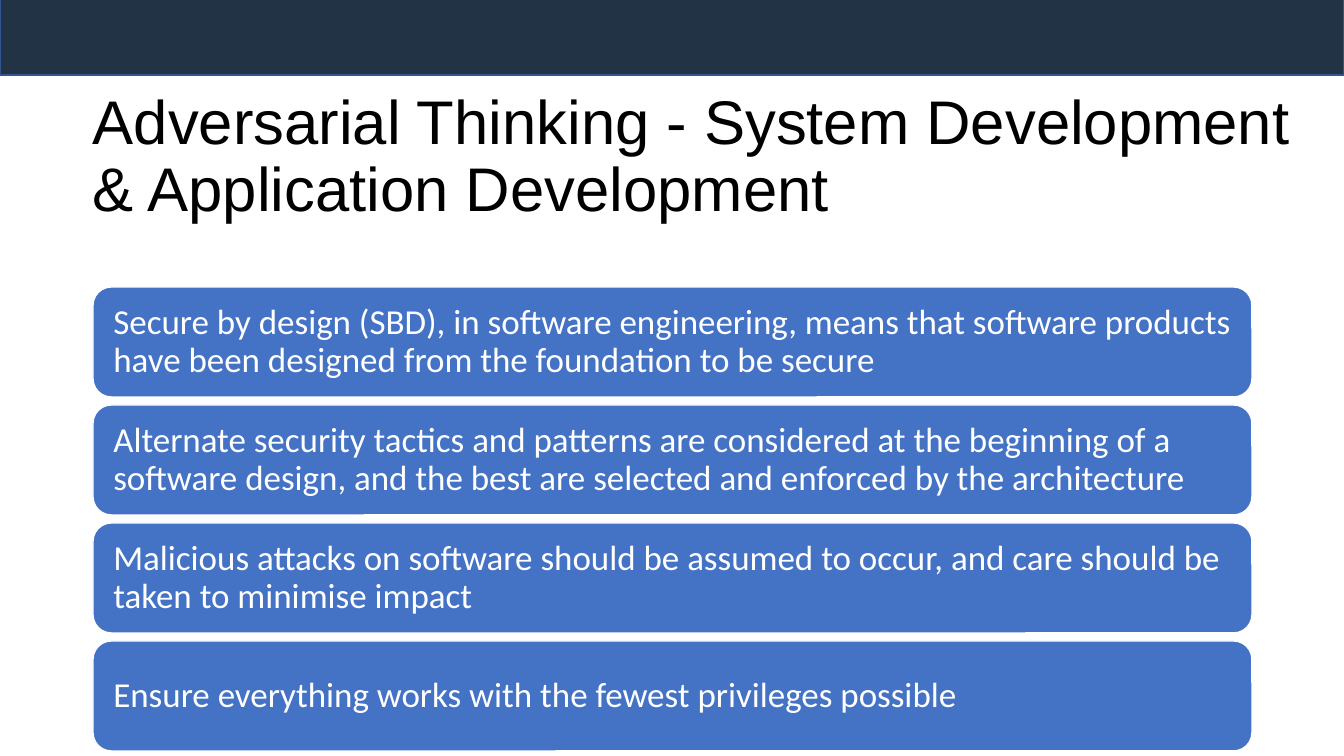
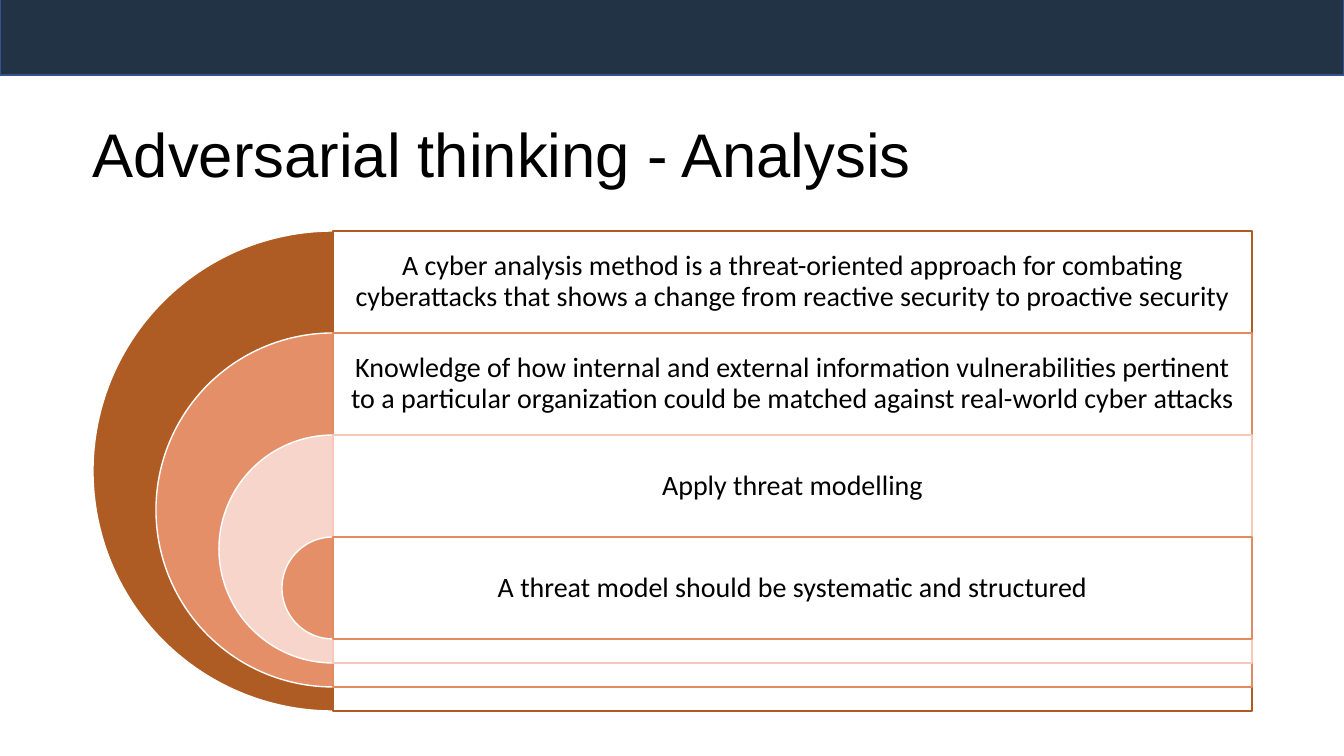
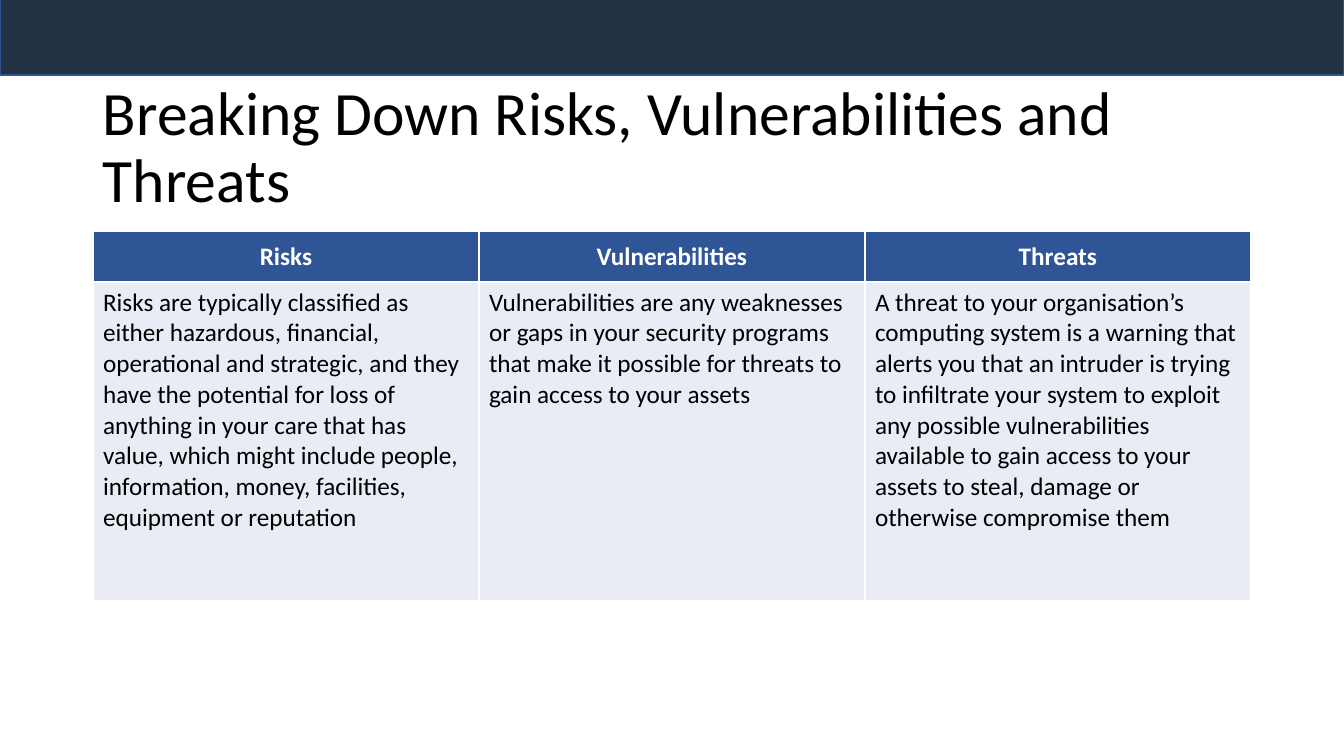
from lxml.etree import SubElement
from pptx import Presentation
from pptx.dml.color import RGBColor
from pptx.enum.shapes import MSO_SHAPE as Shape
from pptx.enum.text import MSO_ANCHOR as Anchor, PP_ALIGN as Align
from pptx.oxml.ns import qn
from pptx.util import Emu, Pt

SLIDE_W, SLIDE_H = 1344, 756
EMU_PER_PX = 12192000 / SLIDE_W
LEFT = 93

COLORS = {
    "band": "223346", "band_line": "325491",
    "white": "FFFFFF", "black": "000000",
    "bar": "4472C4",
    "rust": "AF5C24", "orange": "E48F67", "orange_line": "E38A5F",
    "blush": "F7D5CA", "blush_line": "F5C9BB",
    "header": "2F5597", "cell": "E9EBF5",
}

PRINCIPLES = [
    "Secure by design (SBD), in software engineering, means that software "
    "products have been designed from the foundation to be secure",
    "Alternate security tactics and patterns are considered at the beginning of "
    "a software design, and the best are selected and enforced by the architecture",
    "Malicious attacks on software should be assumed to occur, and care should "
    "be taken to minimise impact",
    "Ensure everything works with the fewest privileges possible",
]

# Each layer: text, fill of the half disc, line of the panel
LAYERS = [
    ("A cyber analysis method is a threat-oriented approach for combating "
     "cyberattacks that shows a change from reactive security to proactive security",
     "rust", "rust"),
    ("Knowledge of how internal and external information vulnerabilities pertinent "
     "to a particular organization could be matched against real-world cyber attacks",
     "orange", "orange_line"),
    ("Apply threat modelling", "blush", "blush_line"),
    ("A threat model should be systematic and structured", "orange", "orange_line"),
]

DEFINITIONS = {
    "Risks":
        "Risks are typically classified as either hazardous, financial, operational "
        "and strategic, and they have the potential for loss of anything in your "
        "care that has value, which might include people, information, money, "
        "facilities, equipment or reputation",
    "Vulnerabilities":
        "Vulnerabilities are any weaknesses or gaps in your security programs that "
        "make it possible for threats to gain access to your assets",
    "Threats":
        "A threat to your organisation’s computing system is a warning that alerts "
        "you that an intruder is trying to infiltrate your system to exploit any "
        "possible vulnerabilities available to gain access to your assets to steal, "
        "damage or otherwise compromise them",
}


def px(*lengths):
    return [Emu(round(length * EMU_PER_PX)) for length in lengths]


def rgb(name):
    return RGBColor.from_string(COLORS[name])


def write(frame, text, size, color, font="Calibri", align=Align.LEFT,
          bold=False, spacing=0.9):
    frame.text = text
    frame.word_wrap = True
    paragraph = frame.paragraphs[0]
    paragraph.alignment = align
    paragraph.line_spacing = spacing
    for run in paragraph.runs:
        run.font.name = font
        run.font.size = Pt(size)
        run.font.bold = bold
        run.font.color.rgb = rgb(color)


def set_insets(frame, side, bottom):
    frame.margin_left, frame.margin_top, frame.margin_right = px(side, side, side)
    frame.margin_bottom, = px(bottom)
    frame.vertical_anchor = Anchor.MIDDLE


def add_block(slide, kind, box, fill, line):
    block = slide.shapes.add_shape(kind, *px(*box))
    block.shadow.inherit = False
    block.fill.solid()
    block.fill.fore_color.rgb = rgb(fill)
    block.line.color.rgb = rgb(line)
    block.line.width = Pt(1)
    return block


def add_titled_slide(deck, title, box, font="Arial"):
    slide = deck.slides.add_slide(deck.slide_layouts[6])
    add_block(slide, Shape.RECTANGLE, (0, -3, SLIDE_W, 78), "band", "band_line")
    heading = slide.shapes.add_textbox(*px(*box)).text_frame
    heading.vertical_anchor = Anchor.MIDDLE
    write(heading, title, 44, "black", font)
    return slide


def add_bars(slide, texts):
    top, height, gap = 287, 110, 8
    for i, text in enumerate(texts):
        box = (LEFT, top + i * (height + gap), 1159, height)
        bar = add_block(slide, Shape.ROUNDED_RECTANGLE, box, "bar", "white")
        set_insets(bar.text_frame, 15, 15)
        write(bar.text_frame, text, 25, "white")


def add_layers(slide, layers):
    top, step, axis, outer, shrink = 231, 102, 333, 480, 126
    for i, (text, fill, line) in enumerate(layers):
        size, y = outer - i * shrink, top + i * step
        half_disc = add_block(slide, Shape.PIE, (axis - size // 2, y, size, size),
                              fill, "white")
        half_disc.adjustments[0] = 54
        half_disc.adjustments[1] = 162
        panel = add_block(slide, Shape.RECTANGLE, (axis, y, 919, size), "white", line)
        # The next layer covers all but the first step of this panel
        set_insets(panel.text_frame, 8, size - step + 8)
        write(panel.text_frame, text, 20, "black", align=Align.CENTER)


def add_cell_borders(cell):
    properties = cell._tc.get_or_add_tcPr()
    for side in ("a:lnL", "a:lnR", "a:lnT", "a:lnB"):
        border = SubElement(properties, qn(side), w=str(Pt(1)))
        fill = SubElement(border, qn("a:solidFill"))
        SubElement(fill, qn("a:srgbClr"), val=COLORS["white"])


def fill_cell(cell, text, fill, color, **style):
    add_cell_borders(cell)
    cell.fill.solid()
    cell.fill.fore_color.rgb = rgb(fill)
    write(cell.text_frame, text, 18, color, spacing=1.0, **style)


def add_definitions(slide, definitions):
    column_width, row_heights = 386, (51, 319)
    box = (LEFT, 231, column_width * len(definitions), sum(row_heights))
    table = slide.shapes.add_table(2, len(definitions), *px(*box)).table
    for row, height in zip(table.rows, px(*row_heights)):
        row.height = height
    for i, (term, meaning) in enumerate(definitions.items()):
        table.columns[i].width, = px(column_width)
        header = table.cell(0, i)
        fill_cell(header, term, "header", "white", align=Align.CENTER, bold=True)
        header.vertical_anchor = Anchor.MIDDLE
        fill_cell(table.cell(1, i), meaning, "cell", "black")


def main():
    deck = Presentation()
    deck.slide_width, deck.slide_height = px(SLIDE_W, SLIDE_H)
    wide_title = (83, 85, 1222, 146)

    development = add_titled_slide(
        deck, "Adversarial Thinking - System Development & Application Development",
        wide_title)
    add_bars(development, PRINCIPLES)

    analysis = add_titled_slide(deck, "Adversarial thinking - Analysis", wide_title)
    add_layers(analysis, LAYERS)

    breakdown = add_titled_slide(
        deck, "Breaking Down Risks, Vulnerabilities and Threats",
        (LEFT, 76, 1159, 146), "Calibri")
    add_definitions(breakdown, DEFINITIONS)

    deck.save("out.pptx")


if __name__ == "__main__":
    main()
